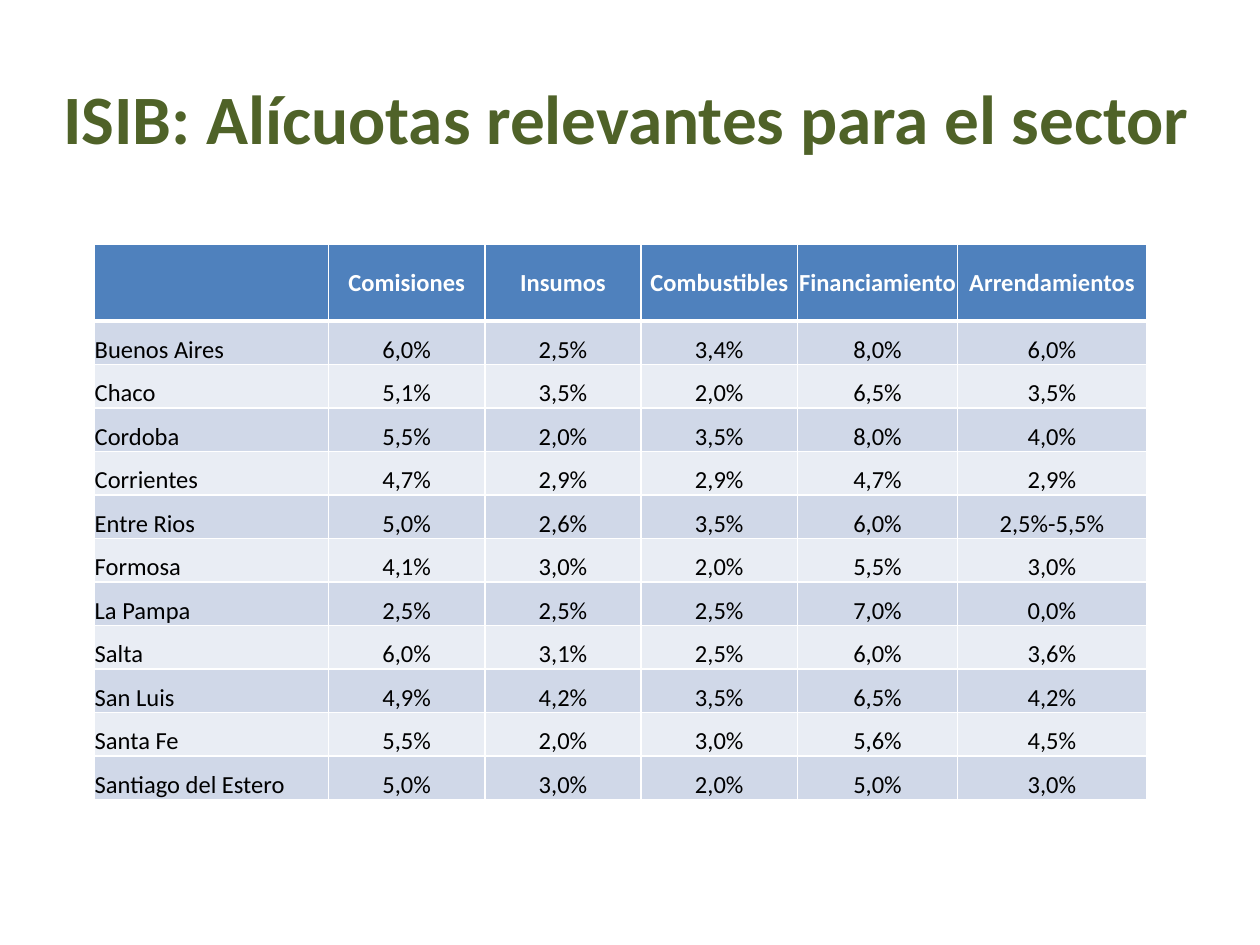
import pptx
import pptx.dml.color
import pptx.enum.text
import pptx.oxml
import pptx.oxml.ns
import pptx.util

Pt = pptx.util.Pt
ALIGN = pptx.enum.text.PP_ALIGN
ANCHOR = pptx.enum.text.MSO_ANCHOR

TITLE = "ISIB: Alícuotas relevantes para el sector "
HEADS = ["", "Comisiones", "Insumos", "Combustibles", "Financiamiento", "Arrendamientos"]
RATES = [
    ("Buenos Aires", "6,0%", "2,5%", "3,4%", "8,0%", "6,0%"),
    ("Chaco", "5,1%", "3,5%", "2,0%", "6,5%", "3,5%"),
    ("Cordoba", "5,5%", "2,0%", "3,5%", "8,0%", "4,0%"),
    ("Corrientes", "4,7%", "2,9%", "2,9%", "4,7%", "2,9%"),
    ("Entre Rios", "5,0%", "2,6%", "3,5%", "6,0%", "2,5%-5,5%"),
    ("Formosa", "4,1%", "3,0%", "2,0%", "5,5%", "3,0%"),
    ("La Pampa", "2,5%", "2,5%", "2,5%", "7,0%", "0,0%"),
    ("Salta", "6,0%", "3,1%", "2,5%", "6,0%", "3,6%"),
    ("San Luis", "4,9%", "4,2%", "3,5%", "6,5%", "4,2%"),
    ("Santa Fe", "5,5%", "2,0%", "3,0%", "5,6%", "4,5%"),
    ("Santiago del Estero", "5,0%", "3,0%", "2,0%", "5,0%", "3,0%"),
]
THEME = {
    "font": "Calibri", "title_size": 39.6, "cell_size": 14,
    "title": "4F6228", "head": "4F81BD", "bands": ("D0D8E8", "E9EDF4"),
    "light": "FFFFFF", "dark": "000000", "line": 1, "rule": 3,
}
WIDTHS = [133.7, 89.3, 89.3, 89.3, 91.6, 107.8]
HEAD_H, ROW_H = 43.7, 24.87
LEFT, TOP = 54.1, 139.8


def color(code):
    return pptx.dml.color.RGBColor.from_string(code)


def write(frame, text, size, ink, bold=False, align=ALIGN.CENTER):
    para = frame.paragraphs[0]
    para.alignment = align
    para.font.size = Pt(size)
    if not text:
        return
    run = para.add_run()
    run.text = text
    run.font.name = THEME["font"]
    run.font.size = Pt(size)
    run.font.bold = bold
    run.font.color.rgb = color(ink)


def border(cell, **sides):
    """Draw white lines; sides maps L, R, T, B to widths in points."""
    props = cell._tc.get_or_add_tcPr()
    for side, width in sides.items():
        props.append(pptx.oxml.parse_xml(
            f'<a:ln{side} {pptx.oxml.ns.nsdecls("a")} w="{Pt(width)}"><a:solidFill>'
            f'<a:srgbClr val="{THEME["light"]}"/></a:solidFill></a:ln{side}>'))


def add_title(slide):
    box = slide.shapes.add_textbox(Pt(25.2), Pt(21.6), Pt(674.6), Pt(90))
    frame = box.text_frame
    frame.word_wrap = True
    frame.vertical_anchor = ANCHOR.MIDDLE
    write(frame, TITLE, THEME["title_size"], THEME["title"], bold=True)


def add_rates(slide):
    rows = [HEADS, *RATES]
    heights = [HEAD_H] + [ROW_H] * len(RATES)
    table = slide.shapes.add_table(
        len(rows), len(HEADS), Pt(LEFT), Pt(TOP), Pt(sum(WIDTHS)), Pt(sum(heights))).table
    for col, width in zip(table.columns, WIDTHS):
        col.width = Pt(width)
    thin, thick = THEME["line"], THEME["rule"]
    for r, (row, height) in enumerate(zip(rows, heights)):
        table.rows[r].height = Pt(height)
        head = r == 0
        fill = THEME["head"] if head else THEME["bands"][(r - 1) % 2]
        for c, text in enumerate(row):
            cell = table.cell(r, c)
            border(cell, L=thin, R=thin, T=thick if r == 1 else thin,
                   B=thick if head else thin)
            cell.fill.solid()
            cell.fill.fore_color.rgb = color(fill)
            cell.margin_left = cell.margin_right = 0
            cell.margin_top = cell.margin_bottom = 0
            cell.vertical_anchor = ANCHOR.MIDDLE if head else ANCHOR.BOTTOM
            write(cell.text_frame, text, THEME["cell_size"],
                  THEME["light"] if head else THEME["dark"], bold=head,
                  align=ALIGN.CENTER if head or c else ALIGN.LEFT)


def main():
    deck = pptx.Presentation()
    deck.slide_width, deck.slide_height = Pt(720), Pt(540)
    slide = deck.slides.add_slide(deck.slide_layouts[6])
    add_title(slide)
    add_rates(slide)
    deck.save("out.pptx")


if __name__ == "__main__":
    main()
